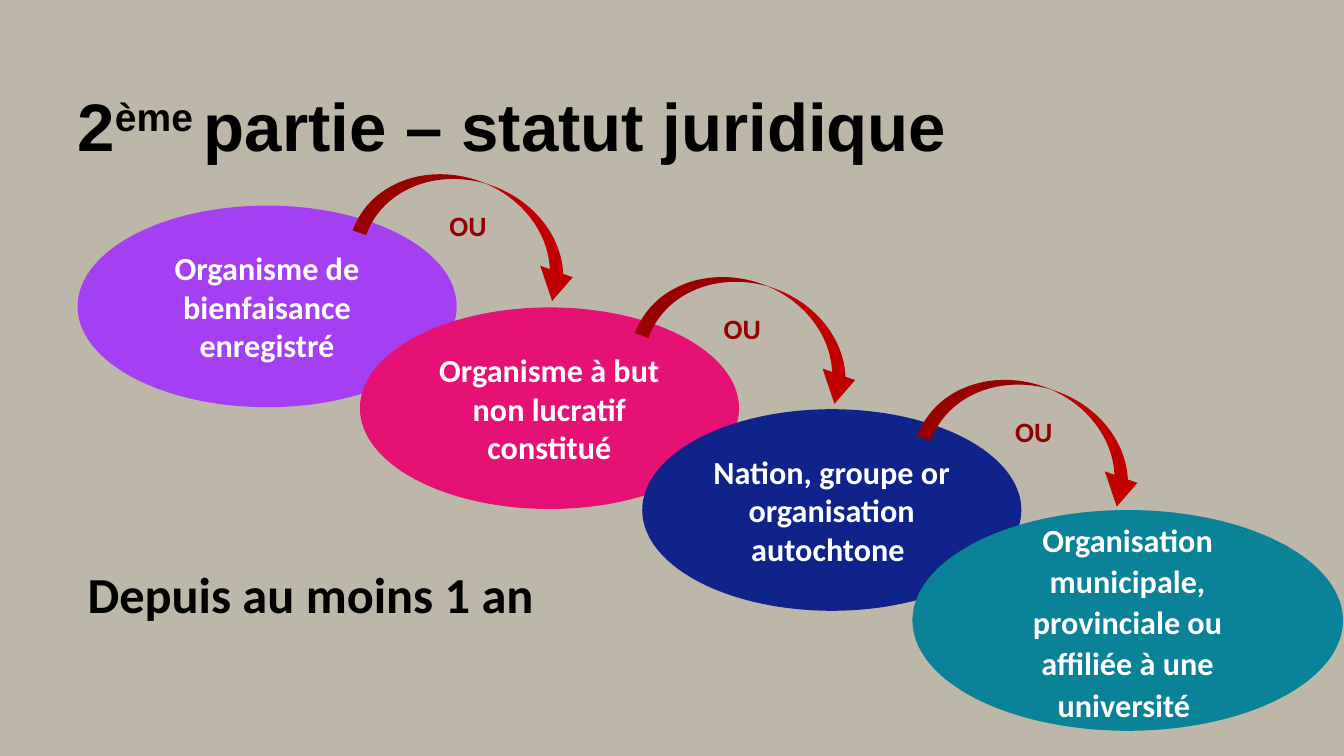
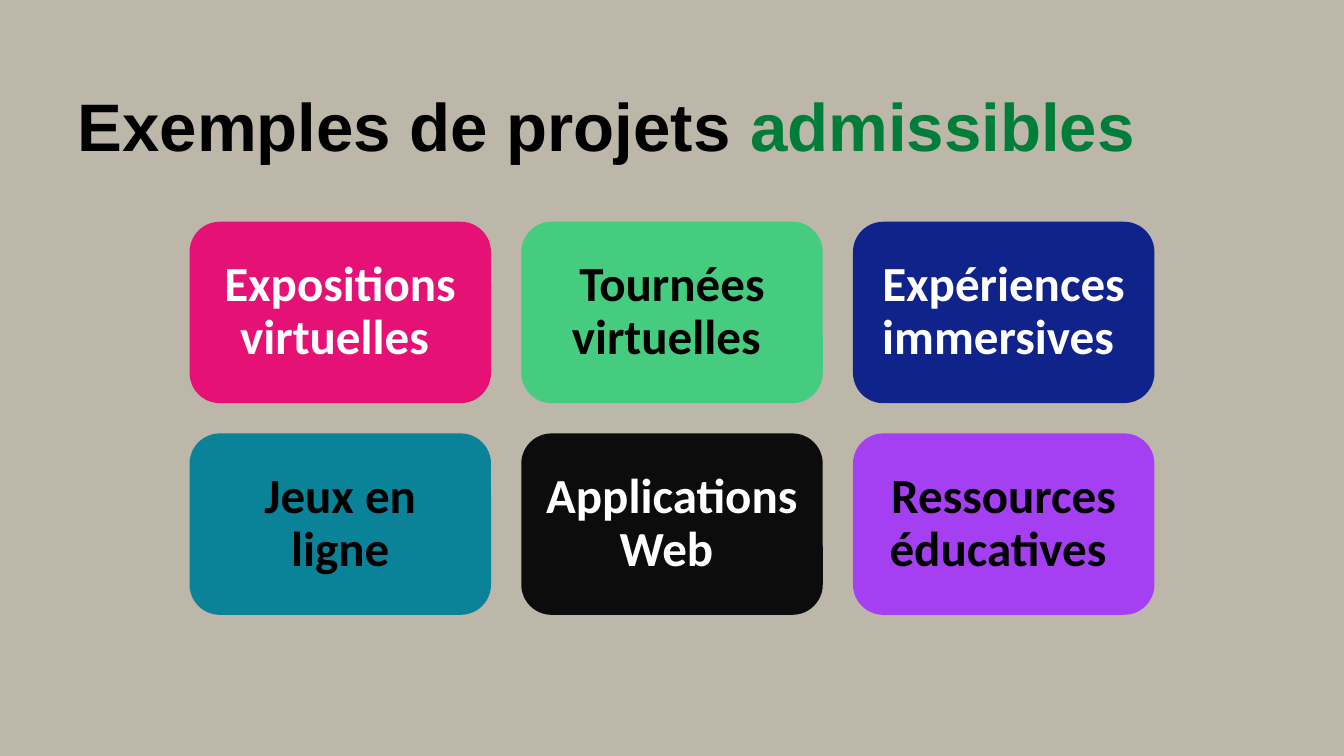
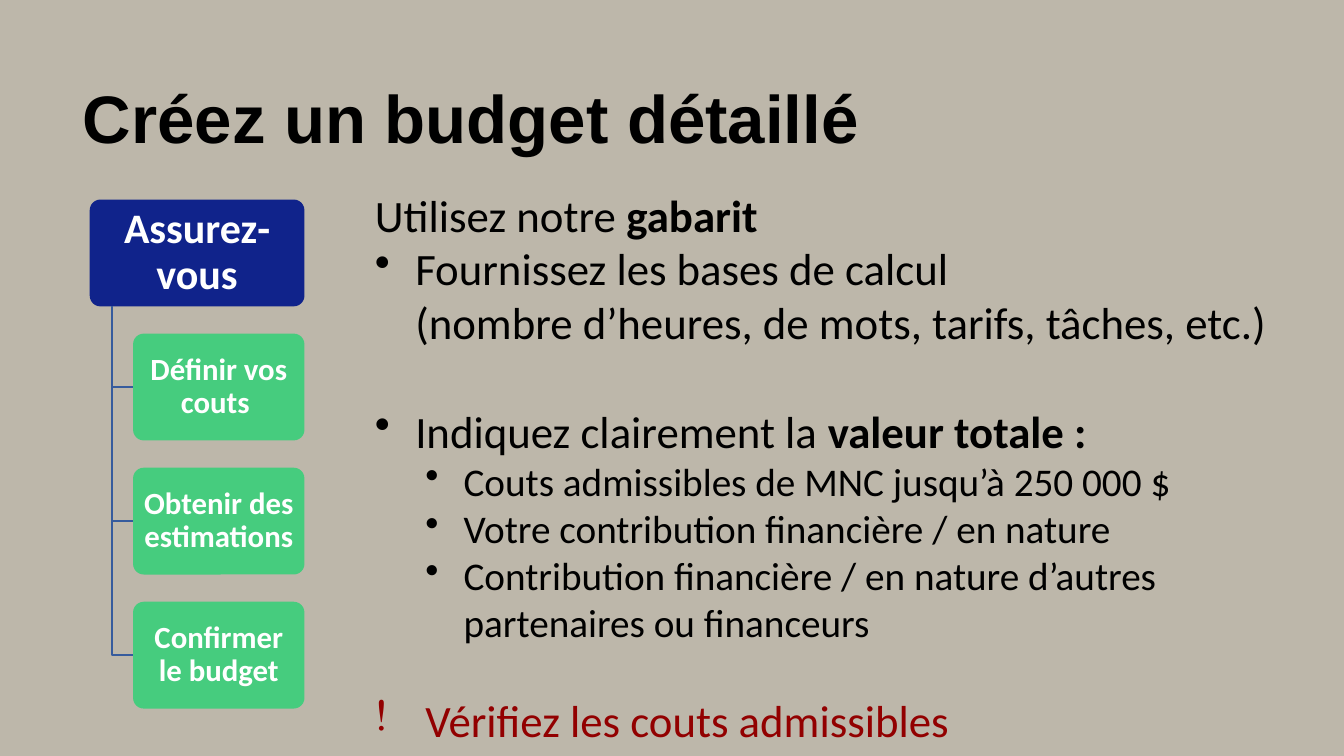
from lxml import etree
from pptx import Presentation
from pptx import util as u
from pptx.dml.color import RGBColor
from pptx.enum import shapes, text
from pptx.oxml.ns import qn

COLOURS = {
    "background": "BDB7AA", "black": "000000", "white": "FFFFFF",
    "purple": "A540F2", "pink": "E51174", "navy": "10238B",
    "teal": "0A8297", "mint": "46CC7E", "ink": "0C0C0C",
    "arrow": "C00000", "alert": "920000", "admissible": "007E39",
    "branch": "365B9D",
}
TITLE = {"name": "Arial", "size": u.Pt(48), "bold": True}
SIDES = ("left", "top", "right", "bottom")
CENTRED = {"alignment": text.PP_ALIGN.CENTER}
TIGHT = {**CENTRED, "line_spacing": 0.9}


def colour(key):
    return RGBColor.from_string(COLOURS[key])


def apply(target, formats):
    for attribute, value in formats.items():
        setattr(target, attribute, value)


def body(size, bold=True):
    return {"name": "Calibri", "size": u.Pt(size), "bold": bold}


def set_frame(frame, margins=(0.1, 0.05, 0.1, 0.05), anchor=text.MSO_ANCHOR.TOP):
    apply(frame, {"word_wrap": True, "vertical_anchor": anchor})
    apply(frame, {f"margin_{side}": u.Inches(m) for side, m in zip(SIDES, margins)})


def add_run(paragraph, wording, font, tint="black", raised=False):
    for index, line in enumerate(wording.split("\n")):
        if index:
            paragraph.add_line_break()
        run = paragraph.add_run()
        run.text = line
        apply(run.font, font)
        run.font.color.rgb = colour(tint)
        if raised:
            run._r.get_or_add_rPr().set("baseline", "30000")


def add_bullet(paragraph, symbol, margin, hanging):
    properties = paragraph._p.get_or_add_pPr()
    properties.set("marL", str(u.Inches(margin)))
    properties.set("indent", str(-u.Inches(hanging)))
    etree.SubElement(properties, qn("a:buChar")).set("char", symbol)


def add_text(slide, box, margins=(0.1, 0.05, 0.1, 0.05), anchor=text.MSO_ANCHOR.TOP):
    frame = slide.shapes.add_textbox(*map(u.Inches, box)).text_frame
    set_frame(frame, margins, anchor)
    return frame


def add_title(slide, box, *parts):
    paragraph = add_text(slide, box, (0, 0, 0, 0.28)).paragraphs[0]
    paragraph.line_spacing = u.Pt(60)
    for wording, *style in parts:
        add_run(paragraph, wording, TITLE, *style)


def add_figure(slide, kind, box, fill):
    figure = slide.shapes.add_shape(kind, *map(u.Inches, box))
    figure.shadow.inherit = False
    figure.fill.solid()
    figure.fill.fore_color.rgb = colour(fill)
    figure.line.fill.background()
    return figure


def add_label(figure, wording, size, tint="white", layout=CENTRED, margins=(0.1, 0.05, 0.1, 0.05)):
    set_frame(figure.text_frame, margins, text.MSO_ANCHOR.MIDDLE)
    paragraph = figure.text_frame.paragraphs[0]
    apply(paragraph, layout)
    add_run(paragraph, wording, body(size), tint)


def add_step(slide, box, fill, wording, size, margins):
    step = add_figure(slide, shapes.MSO_SHAPE.ROUNDED_RECTANGLE, box, fill)
    step.adjustments[0] = 0.1
    add_label(step, wording, size, layout=TIGHT, margins=margins)


def add_branch(slide, left, top, right, bottom):
    start, corner, end = [
        (u.Inches(x), u.Inches(y)) for x, y in ((left, top), (left, bottom), (right, bottom))
    ]
    builder = slide.shapes.build_freeform(*start)
    builder.add_line_segments([corner, end], close=False)
    branch = builder.convert_to_shape()
    branch.shadow.inherit = False
    branch.fill.background()
    branch.line.color.rgb = colour("branch")
    branch.line.width = u.Pt(1)


def build_status(slide):
    add_title(slide, (0.77, 0.8, 10.36, 1.16),
              ("2",), ("ème ", "black", True), ("partie – statut juridique",))
    statuses = [
        ("Organisme de bienfaisance enregistré", "purple"),
        ("Organisme à but non lucratif constitué", "pink"),
        ("Nation, groupe or organisation autochtone ", "navy"),
    ]
    across, down = 2.8, 1.01
    for index, (wording, fill) in enumerate(statuses):
        box = (0.77 + across * index, 2.04 + down * index, 3.76, 2)
        add_label(add_figure(slide, shapes.MSO_SHAPE.OVAL, box, fill), wording, 23)
    public_body = add_figure(slide, shapes.MSO_SHAPE.OVAL, (9.05, 5.06, 4.27, 2.19), "teal")
    add_label(public_body, "Organisation municipale, provinciale ou affiliée à une université ",
              23, layout={**CENTRED, "line_spacing": 1.07, "space_after": u.Pt(8)})
    duration = add_text(slide, (0.77, 5.44, 5, 0.8), anchor=text.MSO_ANCHOR.BOTTOM).paragraphs[0]
    duration.line_spacing = 0.9
    add_run(duration, "Depuis au moins 1 an", body(36))
    for index, choice_left in enumerate((4.36, 7.08, 9.97)):
        choice = add_text(slide, (choice_left, 2.02 + 1.02 * index, 0.7, 0.44))
        add_run(choice.paragraphs[0], "OU", body(20), "alert")
        arrow = add_figure(slide, shapes.MSO_SHAPE.CURVED_DOWN_ARROW,
                           (3.58 + across * index, 1.81 + 1.02 * index, 2.27, 0.88), "arrow")
        arrow.rotation = 19.5
        for position, value in enumerate((0.16, 0.39, 0.33)):
            arrow.adjustments[position] = value


def build_examples(slide):
    add_title(slide, (0.77, 0.8, 10.69, 1.16),
              ("Exemples de projets ",), ("admissibles", "admissible"))
    projects = [
        ("Expositions virtuelles ", "pink", "white"),
        ("Tournées virtuelles ", "mint", "black"),
        ("Expériences immersives ", "navy", "white"),
        ("Jeux en ligne", "teal", "black"),
        ("Applications Web ", "ink", "white"),
        ("Ressources éducatives ", "purple", "black"),
    ]
    width, height, gap = 2.99, 1.8, 0.3
    for index, (wording, fill, tint) in enumerate(projects):
        row, column = divmod(index, 3)
        box = (1.88 + column * (width + gap), 2.2 + row * (height + gap), width, height)
        card = add_figure(slide, shapes.MSO_SHAPE.ROUNDED_RECTANGLE, box, fill)
        add_label(card, wording, 35, tint, TIGHT, (0.15,) * 4)


def build_budget(slide):
    add_title(slide, (0.82, 0.72, 8.2, 0.76), ("Créez un budget détaillé",))
    top, height, pitch = 1.98, 1.06, 1.33
    add_step(slide, (0.89, top, 2.13, height), "navy", "Assurez-vous", 30,
             (0.06, 0.04, 0.06, 0.04))
    steps = ("Définir vos couts ", "Obtenir des estimations", "Confirmer le budget")
    for index, wording in enumerate(steps, 1):
        step_top = top + pitch * index
        add_branch(slide, 1.11, top + height, 1.32, step_top + height / 2)
        add_step(slide, (1.32, step_top, 1.7, height), "mint", wording, 22,
                 (0.05, 0.03, 0.05, 0.03))

    main_point, detail, warning = ("•", 0.4, 0.4), ("•", 0.88, 0.38), ("!", 0.5, 0.5)
    advice = [
        (None, 0, 32, "black", "Utilisez notre ", "gabarit"),
        (main_point, 0, 32, "black",
         "Fournissez les bases de calcul\n(nombre d’heures, de mots, tarifs, tâches, etc.)", ""),
        (main_point, 39, 32, "black", "Indiquez clairement la ", "valeur totale :"),
        (detail, 0, 28, "black", "Couts admissibles de MNC jusqu’à 250 000 $", ""),
        (detail, 0, 28, "black", "Votre contribution financière / en nature", ""),
        (detail, 0, 28, "black",
         "Contribution financière / en nature d’autres partenaires ou financeurs", ""),
        (warning, 34, 32, "alert", "Vérifiez les couts admissibles", ""),
    ]
    frame = add_text(slide, (3.62, 1.81, 9.12, 5.69))
    for index, (bullet, before, size, tint, plain, strong) in enumerate(advice):
        paragraph = frame.add_paragraph() if index else frame.paragraphs[0]
        if before:
            paragraph.space_before = u.Pt(before)
        if bullet:
            paragraph.level = int(bullet is detail)
            add_bullet(paragraph, *bullet)
        add_run(paragraph, plain, body(size, False), tint)
        if strong:
            add_run(paragraph, strong, body(size), tint)


def main():
    deck = Presentation()
    apply(deck, {"slide_width": u.Inches(13.33), "slide_height": u.Inches(7.5)})
    backdrop = deck.slide_master.background.fill
    backdrop.solid()
    backdrop.fore_color.rgb = colour("background")
    for build in (build_status, build_examples, build_budget):
        build(deck.slides.add_slide(deck.slide_layouts[6]))
    deck.save("out.pptx")


if __name__ == "__main__":
    main()
